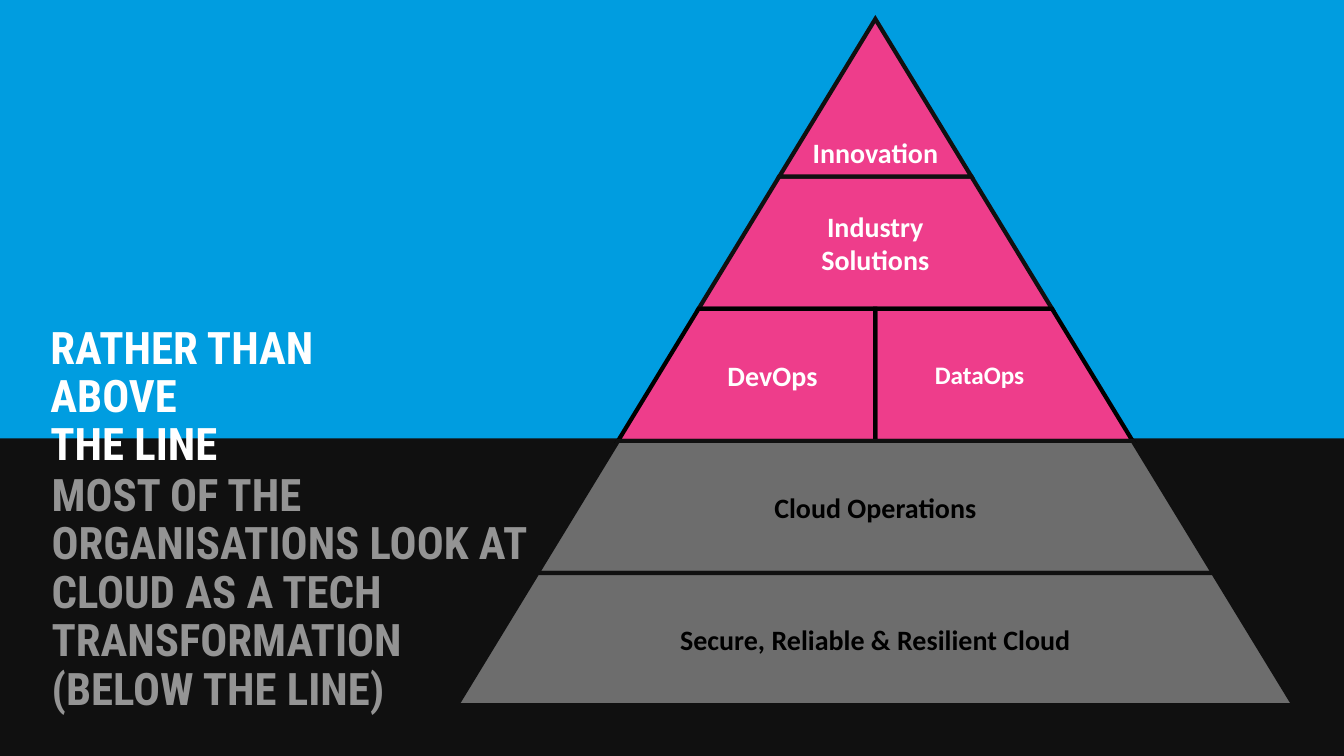
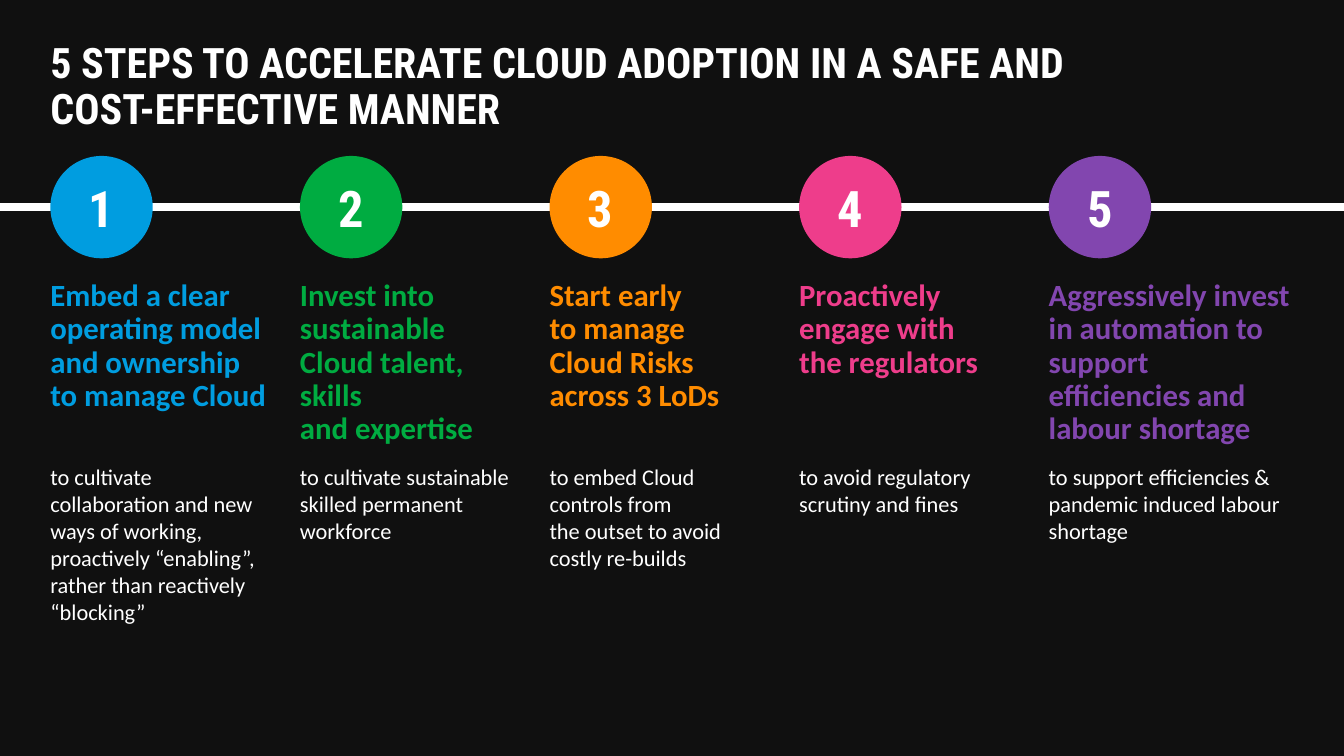
"""Build two slides on cloud adoption: a pyramid and a five-step timeline."""
from dataclasses import dataclass

from lxml import etree
from pptx import Presentation
from pptx.dml.color import RGBColor
from pptx.enum.shapes import MSO_CONNECTOR, MSO_SHAPE
from pptx.enum.text import MSO_ANCHOR, PP_ALIGN
from pptx.oxml.ns import qn
from pptx.util import Cm, Pt

LEFT, CENTER = PP_ALIGN.LEFT, PP_ALIGN.CENTER
TOP, MIDDLE, BOTTOM = MSO_ANCHOR.TOP, MSO_ANCHOR.MIDDLE, MSO_ANCHOR.BOTTOM
RECTANGLE, OVAL = MSO_SHAPE.RECTANGLE, MSO_SHAPE.OVAL
STRAIGHT = MSO_CONNECTOR.STRAIGHT

SLIDE_WIDTH, SLIDE_HEIGHT = 33.87, 19.05
MARGIN = 1.27
INSET = 0.2


@dataclass(frozen=True)
class Theme:
    """Colours, fonts and type sizes shared by the slides."""
    ink: str = "101010"
    black: str = "000000"
    white: str = "FFFFFF"
    blue: str = "009DE0"
    green: str = "00AC41"
    orange: str = "FF8C00"
    pink: str = "EE3D8B"
    purple: str = "8246AF"
    grey: str = "6D6D6D"
    light_grey: str = "949494"
    heading_font: str = "Roboto Condensed"
    body_font: str = "Calibri"
    number_size: int = 36
    statement_size: int = 32
    title_size: int = 30
    step_size: int = 22
    label_size: int = 20
    small_label_size: int = 18
    body_size: int = 16
    tight: float = 0.9


THEME = Theme()


def write_text(frame, text, *, size, color, font=THEME.body_font, bold=True,
               align=LEFT, anchor=TOP, insets=(0, 0, 0, 0), line_spacing=1.0):
    """Fill a text frame with one paragraph in the given format."""
    frame.word_wrap = True
    frame.vertical_anchor = anchor
    (frame.margin_left, frame.margin_top,
     frame.margin_right, frame.margin_bottom) = map(Cm, insets)
    paragraph = frame.paragraphs[0]
    paragraph.text = text
    paragraph.alignment = align
    paragraph.line_spacing = line_spacing
    for run in paragraph.runs:
        run.font.name = font
        run.font.size = Pt(size)
        run.font.bold = bold
        run.font.color.rgb = RGBColor.from_string(color)


class Deck:
    """Hold the presentation, its style and the current slide."""

    def __init__(self, theme):
        self.theme = theme
        self.presentation = Presentation()
        self.presentation.slide_width = Cm(SLIDE_WIDTH)
        self.presentation.slide_height = Cm(SLIDE_HEIGHT)
        self.slide = None

    def add_slide(self):
        """Start a blank slide on the dark background."""
        self.slide = self.presentation.slides.add_slide(self.presentation.slide_layouts[6])
        fill = self.slide.background.fill
        fill.solid()
        fill.fore_color.rgb = RGBColor.from_string(self.theme.ink)

    def paint(self, shape, color):
        """Give a shape a flat fill without shadow."""
        shape.shadow.inherit = False
        shape.fill.solid()
        shape.fill.fore_color.rgb = RGBColor.from_string(color)

    def shape(self, kind, left, top, width, height, color):
        """Add a borderless preset shape."""
        shape = self.slide.shapes.add_shape(kind, Cm(left), Cm(top), Cm(width), Cm(height))
        self.paint(shape, color)
        shape.line.fill.background()
        return shape

    def polygon(self, points, color, outline):
        """Add a closed outline with sharp corners."""
        start, *others = [(Cm(x), Cm(y)) for x, y in points]
        builder = self.slide.shapes.build_freeform(*start)
        builder.add_line_segments(others, close=True)
        shape = builder.convert_to_shape()
        self.paint(shape, color)
        shape.line.color.rgb = RGBColor.from_string(outline)
        shape.line.width = Pt(3)
        line = shape._element.spPr.find(qn("a:ln"))
        etree.SubElement(line, qn("a:miter"), lim="800000")
        return shape

    def line(self, start, end, color, width):
        """Add a straight line."""
        connector = self.slide.shapes.add_connector(STRAIGHT, *map(Cm, (*start, *end)))
        connector.line.color.rgb = RGBColor.from_string(color)
        connector.line.width = Pt(width)
        etree.SubElement(connector._element.spPr, qn("a:effectLst"))

    def text(self, text, left, top, width, height, **style):
        """Add a wrapping text box."""
        box = self.slide.shapes.add_textbox(Cm(left), Cm(top), Cm(width), Cm(height))
        write_text(box.text_frame, text, **style)

    def heading(self, text, left, top, width, height, size, color):
        """Add a bold condensed heading."""
        self.text(text, left, top, width, height, size=size, color=color,
                  font=self.theme.heading_font, line_spacing=self.theme.tight)


def build_pyramid(deck):
    """Draw the pyramid that stands across the line."""
    theme = deck.theme
    center, apex, first_level, step, slope = 22.06, 0.48, 4.45, 3.33, 0.61
    levels = [apex] + [first_level + step * index for index in range(5)]
    deck.add_slide()
    deck.shape(RECTANGLE, 0, 0, SLIDE_WIDTH, 11.05, theme.blue)

    def edges(level):
        half = (levels[level] - apex) * slope
        return center - half, center + half

    def tier(text, level, color, outline, text_color, side=None,
             size=theme.label_size, align=CENTER, anchor=MIDDLE, left_inset=INSET):
        top, bottom = levels[level:level + 2]
        top_left, top_right = edges(level)
        left, right = edges(level + 1)
        if side == "left":
            top_right = right = center
        elif side == "right":
            top_left = left = center
        points = [(top_left, top), (top_right, top), (right, bottom), (left, bottom)]
        if level == 0:
            points.pop(0)
        shape = deck.polygon(points, color, outline)
        write_text(shape.text_frame, text, size=size, color=text_color, align=align,
                   anchor=anchor, insets=(left_inset, INSET, INSET, INSET))

    pink = (theme.pink, theme.ink, theme.white)
    split = (theme.pink, theme.black, theme.white)
    grey = (theme.grey, theme.ink, theme.black)
    tier("Industry\nSolutions", 1, *pink)
    tier("Innovation", 0, *pink, anchor=BOTTOM)
    tier("DataOps", 2, *split, side="right", size=theme.small_label_size,
         align=LEFT, left_inset=1.5)
    tier("DevOps", 2, *split, side="left", left_inset=1.5)
    tier("Cloud Operations", 3, *grey)
    tier("Secure, Reliable & Resilient Cloud", 4, *grey)

    deck.heading("MOST OF THE ORGANISATIONS LOOK AT CLOUD AS A TECH TRANSFORMATION\n"
                 "(BELOW THE LINE)",
                 1.3, 11.91, 12.73, 6.2, theme.statement_size, theme.light_grey)
    deck.heading("RATHER THAN ABOVE\nTHE LINE",
                 MARGIN, 8.2, 9.02, 3.7, theme.statement_size, theme.white)


def build_steps(deck):
    """Draw the five numbered steps along a line."""
    theme = deck.theme
    steps = [
        (theme.blue, "Embed a clear operating model and ownership\nto manage Cloud",
         "to cultivate collaboration and new ways of working, proactively “enabling”, "
         "rather than reactively “blocking”"),
        (theme.green, "Invest into sustainable Cloud talent, skills\nand expertise",
         "to cultivate sustainable skilled permanent workforce"),
        (theme.orange, "Start early\nto manage\nCloud Risks\nacross 3 LoDs",
         "to embed Cloud controls from\nthe outset to avoid costly re-builds"),
        (theme.pink, "Proactively\nengage with\nthe regulators",
         "to avoid regulatory scrutiny and fines"),
        (theme.purple,
         "Aggressively invest in automation to support efficiencies and labour shortage",
         "to support efficiencies & pandemic induced labour shortage"),
    ]
    pitch, diameter, circle_top = 6.29, 2.58, 3.93
    line_y = circle_top + diameter / 2
    deck.add_slide()
    deck.heading("5 STEPS TO ACCELERATE CLOUD ADOPTION IN A SAFE AND\nCOST-EFFECTIVE MANNER",
                 MARGIN, 1.07, 31.33, 2.1, theme.title_size, theme.white)
    deck.line((0, line_y), (SLIDE_WIDTH, line_y), theme.white, 6)
    for index, (color, title, benefit) in enumerate(steps):
        left = MARGIN + pitch * index
        width = 6.17 if index == len(steps) - 1 else 5.44
        circle = deck.shape(OVAL, left, circle_top, diameter, diameter, color)
        write_text(circle.text_frame, str(index + 1), size=theme.number_size,
                   color=theme.white, font=theme.heading_font, align=CENTER,
                   anchor=MIDDLE, insets=(INSET,) * 4)
        deck.text(title, left, 7.06, width, 4.24, size=theme.step_size, color=color,
                  line_spacing=theme.tight)
        deck.text(benefit, left, 11.68, width, 4.11, size=theme.body_size,
                  color=theme.white, bold=False)


def main():
    """Build and save the presentation."""
    deck = Deck(THEME)
    build_pyramid(deck)
    build_steps(deck)
    deck.presentation.save("out.pptx")


if __name__ == "__main__":
    main()
